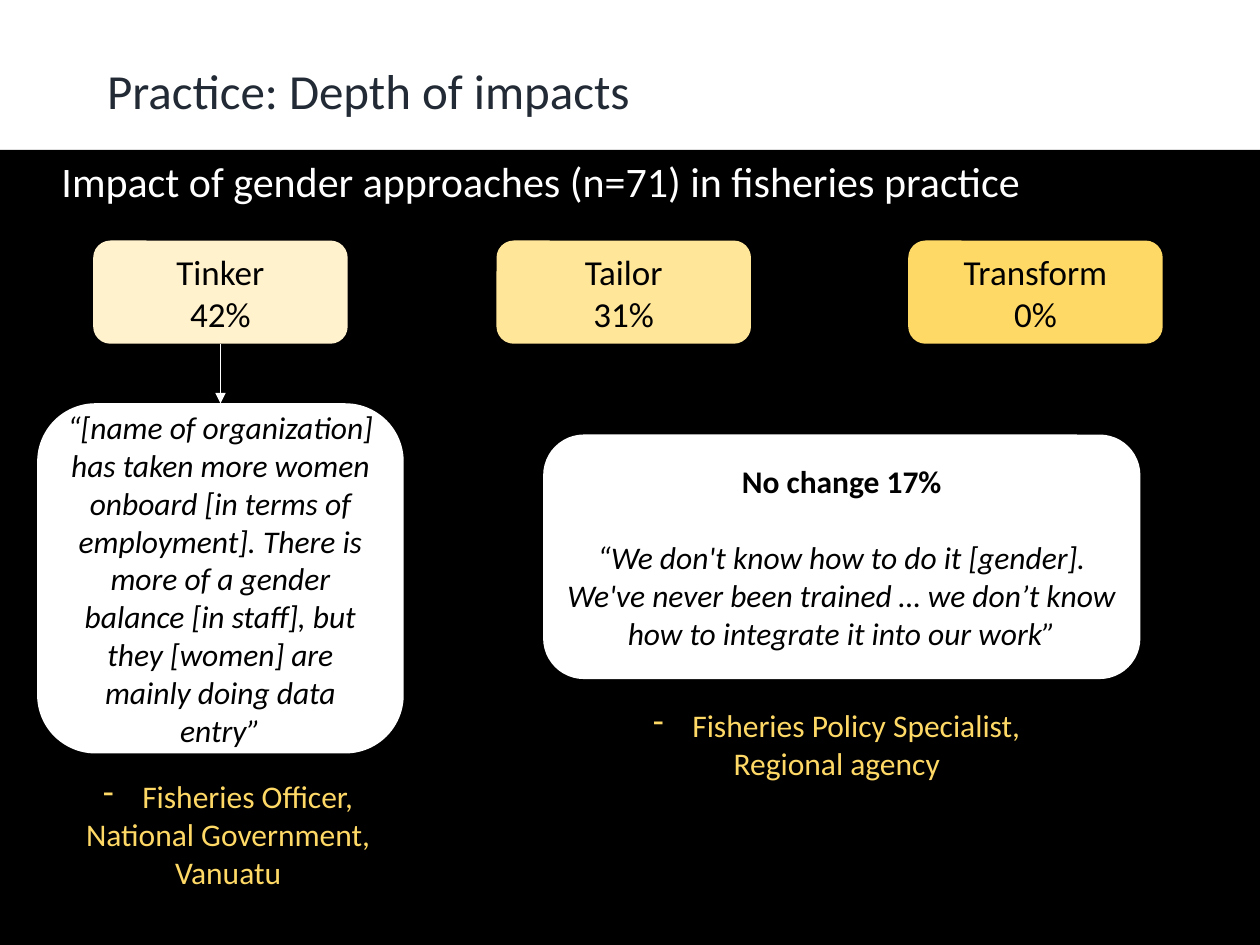
from lxml.etree import SubElement
from pptx import Presentation
from pptx.dml.color import RGBColor
from pptx.enum.shapes import MSO_CONNECTOR as Link, MSO_SHAPE as Preset
from pptx.enum.text import MSO_ANCHOR as Anchor, PP_ALIGN as Align
from pptx.oxml.ns import qn
from pptx.util import Cm, Pt

COLOURS = {
    "black": "000000", "white": "FFFFFF", "navy": "222A35",
    "cream": "FFF2CC", "butter": "FFE699", "gold": "FFD966",
}


def rgb(name):
    """Return the named palette colour."""
    return RGBColor.from_string(COLOURS[name])


def write(para, text, size=18, colour="black", bold=False, italic=False,
          align=Align.CENTER, before=0, spacing=None, dash=False):
    """Write one formatted line of text into a paragraph."""
    para.alignment = align
    if before:
        para.space_before = Pt(before)
    if spacing:
        para.line_spacing = spacing
    if dash:
        properties = para._p.get_or_add_pPr()
        properties.set("marL", str(Cm(0.79)))
        properties.set("indent", str(-Cm(0.79)))
        SubElement(properties, qn("a:buChar")).set("char", "-")
    span = para.add_run()
    span.text = text
    font = span.font
    font.name, font.size, font.bold, font.italic = "Calibri", Pt(size), bold, italic
    font.color.rgb = rgb(colour)


class Painter:
    """Hold the style and the current page, and draw each kind of element."""

    def __init__(self, page):
        self.page = page

    def fill_text(self, frame, lines):
        """Write (text, format) pairs as the paragraphs of a frame."""
        for index, (text, style) in enumerate(lines):
            para = frame.add_paragraph() if index else frame.paragraphs[0]
            write(para, text, **style)

    def panel(self, left, top, width, height, fill, lines=(), preset=Preset.ROUNDED_RECTANGLE):
        """Draw a filled shape with centred text."""
        box = self.page.shapes.add_shape(preset, Cm(left), Cm(top), Cm(width), Cm(height))
        box.shadow.inherit = False
        box.fill.solid()
        box.fill.fore_color.rgb = rgb(fill)
        box.line.fill.background()
        box.text_frame.word_wrap = True
        box.text_frame.vertical_anchor = Anchor.MIDDLE
        self.fill_text(box.text_frame, lines)
        return box

    def label(self, left, top, width, height, lines, wrap=True, inset=0.13):
        """Draw a plain text box."""
        box = self.page.shapes.add_textbox(Cm(left), Cm(top), Cm(width), Cm(height))
        box.text_frame.word_wrap = wrap
        box.text_frame.margin_top = Cm(inset)
        self.fill_text(box.text_frame, lines)

    def arrow(self, upper, lower):
        """Join the bottom of one box to the top of another."""
        link = self.page.shapes.add_connector(Link.STRAIGHT, 0, 0, 0, 0)
        link.begin_connect(upper, 2)
        link.end_connect(lower, 0)
        link.line.color.rgb = rgb("white")
        link.line.width = Pt(0.5)
        SubElement(link.line._get_or_add_ln(), qn("a:tailEnd")).set("type", "triangle")
        SubElement(link._element.spPr, qn("a:effectLst"))


def main():
    """Build the slide and save the deck."""
    deck = Presentation()
    deck.slide_width, deck.slide_height = Cm(25.4), Cm(19.05)
    painter = Painter(deck.slides.add_slide(deck.slide_layouts[6]))

    painter.panel(0, 3.02, 25.4, 16.03, "black", preset=Preset.RECTANGLE)
    painter.label(1.91, 1.09, 11.18, 1.45, [
        ("Practice: Depth of impacts", dict(size=28, colour="navy", align=Align.LEFT)),
    ], wrap=False)
    painter.label(0.99, 2.01, 24.16, 14.4, [
        ("Impact of gender approaches (n=71) in fisheries practice",
         dict(size=24, colour="white", align=Align.LEFT, spacing=0.9)),
    ], inset=1.25)

    cards = [
        painter.panel(left, 4.85, 5.13, 2.08, fill,
                      [(name, dict(size=20)), (share, dict(size=20))])
        for left, fill, name, share in [
            (1.88, "cream", "Tinker", "42%"),
            (10.01, "butter", "Tailor", "31%"),
            (18.31, "gold", "Transform", "0%"),
        ]
    ]
    tinker_quote = painter.panel(0.75, 8.13, 7.39, 7.06, "white", [
        ("“[name of organization] has taken more women onboard [in terms of "
         "employment]. There is more of a gender balance [in staff], but they "
         "[women] are mainly doing data entry”", dict(italic=True)),
    ])
    painter.panel(10.95, 8.76, 12.04, 4.93, "white", [
        ("No change 17%", dict(bold=True)),
        ("“We don't know how to do it [gender]. We've never been trained … "
         "we don’t know how to integrate it into our work”",
         dict(italic=True, before=22)),
    ])
    painter.arrow(cards[0], tinker_quote)

    for left, top, width, height, role, employer in [
        (0.69, 15.54, 7.82, 2.57, "Fisheries Officer,", "National Government, Vanuatu"),
        (11.89, 14.1, 9.96, 1.8, "Fisheries Policy Specialist,", "Regional agency"),
    ]:
        painter.label(left, top, width, height, [
            (role, dict(colour="gold", dash=True)),
            (employer, dict(colour="gold")),
        ])

    deck.save("out.pptx")


if __name__ == "__main__":
    main()
